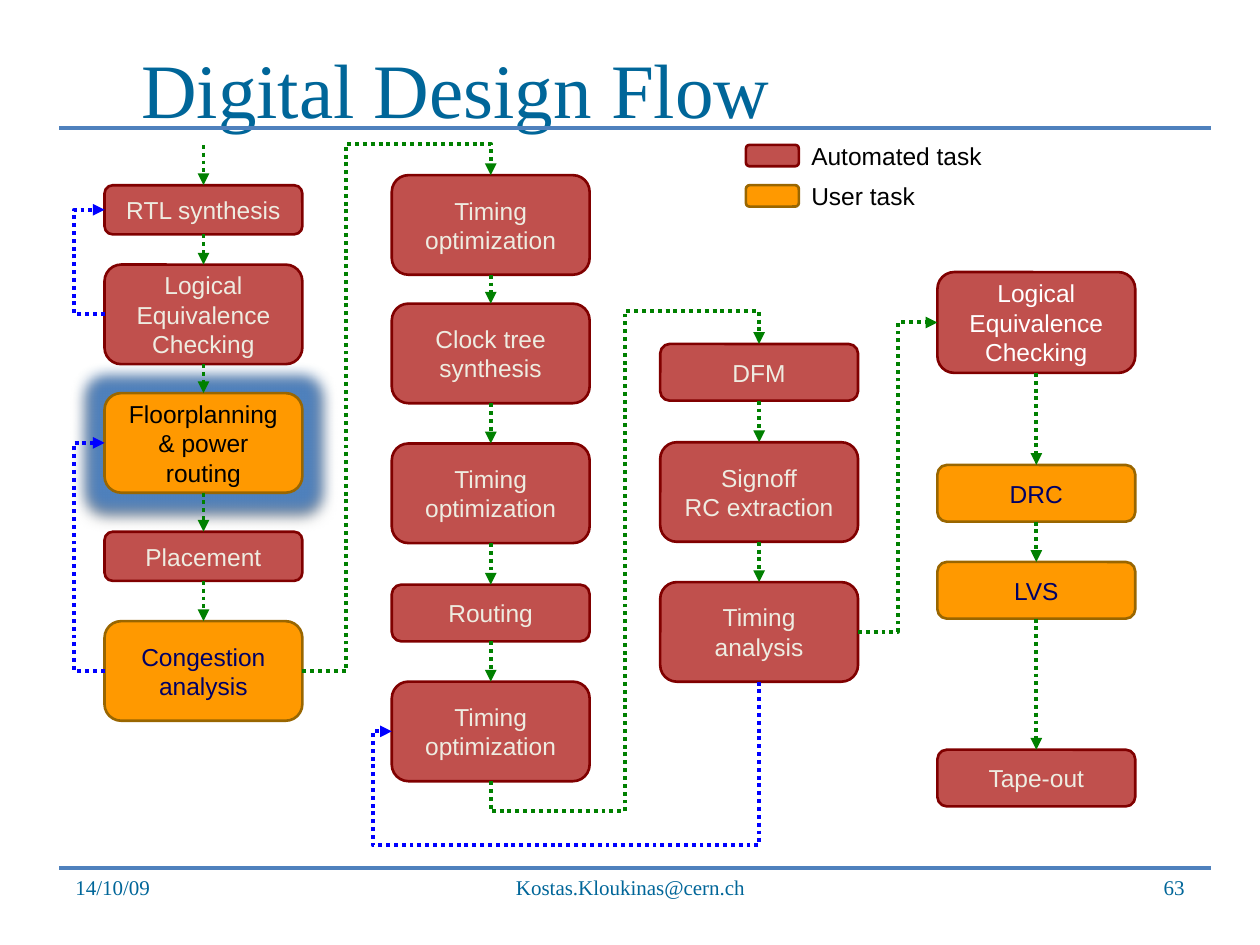
from dataclasses import dataclass

from lxml import etree
from pptx import Presentation
from pptx import util as u
from pptx.dml.color import RGBColor
from pptx.enum import dml, shapes, text
from pptx.oxml.ns import qn


@dataclass(frozen=True)
class Theme:
    serif: str = "Times New Roman"
    sans: str = "Arial"
    title_size: int = 44
    task_size: int = 14
    footer_size: int = 12
    heading: str = "006699"
    rule: str = "4F81BD"
    flow: str = "008000"
    feedback: str = "0000FF"
    ink: str = "000000"
    light: str = "EEECE1"
    white: str = "FFFFFF"
    navy: str = "000066"
    automated: tuple = ("C0504D", "800000")
    user: tuple = ("FF9900", "996600")


@dataclass(frozen=True)
class Box:
    left: float
    top: float
    width: float
    height: float


THEME = Theme()
deck = Presentation()
deck.slide_width, deck.slide_height = u.Inches(10), u.Inches(7.5)
COLUMN, ROW = deck.slide_width / 100, deck.slide_height / 75
SMALL, MEDIUM, LARGE = 3.9, 4.5, 7.9  # task heights in rows
TASK_WIDTH = 15.7


def point(column, row):
    return round(column * COLUMN), round(row * ROW)


def frame(box):
    return *point(box.left, box.top), *point(box.width, box.height)


def write(holder, lines, size, font, color, align, anchor):
    body = holder.text_frame
    body.word_wrap = True
    body.auto_size = text.MSO_AUTO_SIZE.NONE
    body.vertical_anchor = anchor
    for index, line in enumerate(lines):
        para = body.add_paragraph() if index else body.paragraphs[0]
        para.alignment = align
        span = para.add_run()
        span.text = line
        span.font.size, span.font.name = u.Pt(size), font
        span.font.color.rgb = RGBColor.from_string(color)


def style_line(line, color, width):
    line.color.rgb = RGBColor.from_string(color)
    line.width = u.Pt(width)


def style_arrow(arrow, color):
    style_line(arrow.line, color, 2.25)
    arrow.line.dash_style = dml.MSO_LINE.ROUND_DOT
    outline = arrow.element.spPr.find(qn("a:ln"))
    etree.SubElement(outline, qn("a:tailEnd"), type="triangle")


def straight(page, start, end, kind=shapes.MSO_CONNECTOR.STRAIGHT):
    connector = page.shapes.add_connector(kind, *start, *end)
    etree.SubElement(connector.element.spPr, qn("a:effectLst"))
    return connector


def join(page, first, second, sides=(2, 0), kind=shapes.MSO_CONNECTOR.STRAIGHT):
    arrow = straight(page, (0, 0), (0, 0), kind)
    arrow.begin_connect(first, sides[0])
    arrow.end_connect(second, sides[1])
    style_arrow(arrow, THEME.flow)


def side(task, number):
    """Middle of a side: 0 top, 1 left, 2 bottom, 3 right."""
    across, down = ((0.5, 0), (0, 0.5), (0.5, 1), (1, 0.5))[number]
    return round(task.left + task.width * across), round(task.top + task.height * down)


def route(page, start, end, turns, color):
    """Arrow with right-angle turns; each turn is a column ("x") or row ("y")."""
    x, y = start
    corners = []
    for axis, place in turns:
        x, y = (round(place * COLUMN), y) if axis == "x" else (x, round(place * ROW))
        corners.append((x, y))
    corners.append((x, end[1]) if turns[-1][0] == "x" else (end[0], y))
    builder = page.shapes.build_freeform(*start, scale=1.0)
    builder.add_line_segments(corners + [end], close=False)
    arrow = builder.convert_to_shape()
    arrow.shadow.inherit = False
    arrow.fill.background()
    style_arrow(arrow, color)


def rounded(page, box, colors):
    shape = page.shapes.add_shape(shapes.MSO_SHAPE.ROUNDED_RECTANGLE, *frame(box))
    shape.shadow.inherit = False
    shape.fill.solid()
    shape.fill.fore_color.rgb = RGBColor.from_string(colors[0])
    style_line(shape.line, colors[1], 1.5)
    return shape


def add_glow(shape):
    effects = shape.element.spPr.find(qn("a:effectLst"))
    glow = etree.SubElement(effects, qn("a:glow"), rad=str(u.Pt(18)))
    etree.SubElement(glow, qn("a:srgbClr"), val=THEME.rule)
    shadow = etree.SubElement(effects, qn("a:outerShdw"), blurRad=str(u.Pt(4)),
                              dist=str(u.Pt(3)), dir="5400000", rotWithShape="0")
    black = etree.SubElement(shadow, qn("a:srgbClr"), val=THEME.ink)
    etree.SubElement(black, qn("a:alpha"), val="43000")


def task_column(page, left, top, tasks):
    """Stack (label, height, gap before, colours, text colour), joined downwards."""
    placed = []
    for label, height, gap, colors, ink in tasks:
        top += gap
        task = rounded(page, Box(left, top, TASK_WIDTH, height), colors)
        write(task, label.split("\n"), THEME.task_size, THEME.sans, ink,
              text.PP_ALIGN.CENTER, text.MSO_ANCHOR.MIDDLE)
        if placed:
            join(page, placed[-1], task)
        placed.append(task)
        top += height
    return placed


def header(page, box):
    title = page.shapes.title
    title.left, title.top, title.width, title.height = frame(box)
    title.text_frame.margin_top = u.Inches(0.12)
    write(title, ["Digital Design Flow"], THEME.title_size, THEME.serif, THEME.heading,
          text.PP_ALIGN.LEFT, text.MSO_ANCHOR.TOP)


def footer(page, box):
    parts = (("14/10/09", 0, 23.3, text.PP_ALIGN.LEFT),
             ("Kostas.Kloukinas@cern.ch", 29.2, 31.7, text.PP_ALIGN.CENTER),
             ("63", 66.7, 23.3, text.PP_ALIGN.RIGHT))
    for label, offset, width, align in parts:
        holder = page.shapes.add_textbox(
            *frame(Box(box.left + offset, box.top, width, box.height)))
        write(holder, [label], THEME.footer_size, THEME.serif, THEME.heading,
              align, text.MSO_ANCHOR.BOTTOM)


def legend(page, box):
    entries = (("Automated task", THEME.automated), ("User task", THEME.user))
    for index, (label, colors) in enumerate(entries):
        top = box.top + index * (box.height - 1.7)
        rounded(page, Box(box.left, top, 4.2, 1.7), colors)
        caption = page.shapes.add_textbox(
            *frame(Box(box.left + 4.2, top, box.width - 4.2, 1.7)))
        caption.text_frame.margin_top = caption.text_frame.margin_bottom = 0
        write(caption, [label], THEME.task_size, THEME.sans, THEME.ink,
              text.PP_ALIGN.LEFT, text.MSO_ANCHOR.MIDDLE)


def flow_chart(page):
    auto, user = THEME.automated, THEME.user
    light, navy = THEME.light, THEME.navy
    # Four columns of tasks
    synthesis, check, floorplan, _, congestion = task_column(page, 8.3, 14.7, (
        ("RTL synthesis", SMALL, 0, auto, light),
        ("Logical Equivalence Checking", LARGE, 2.4, auto, light),
        ("Floorplanning\n& power routing", LARGE, 2.3, user, THEME.ink),
        ("Placement", SMALL, 3.1, auto, light),
        ("Congestion analysis", LARGE, 3.2, user, navy)))
    add_glow(floorplan)
    timing = task_column(page, 31.1, 13.9, (
        ("Timing optimization", LARGE, 0, auto, light),
        ("Clock tree synthesis", LARGE, 2.3, auto, light),
        ("Timing optimization", LARGE, 3.2, auto, light),
        ("Routing", MEDIUM, 3.3, auto, light),
        ("Timing optimization", LARGE, 3.2, auto, light)))
    signoff = task_column(page, 52.4, 27.3, (
        ("DFM", MEDIUM, 0, auto, light),
        ("Signoff\nRC extraction", LARGE, 3.3, auto, light),
        ("Timing analysis", LARGE, 3.2, auto, light)))
    final = task_column(page, 74.4, 21.6, (
        ("Logical Equivalence Checking", 8, 0, auto, THEME.white),
        ("DRC", MEDIUM, 7.3, user, navy),
        ("LVS", MEDIUM, 3.2, user, navy),
        ("Tape-out", MEDIUM, 10.4, auto, light)))

    # Flow into the first column and from column to column
    x, _ = side(synthesis, 0)
    entry = straight(page, (x, round(11.5 * ROW)), side(synthesis, 0))
    entry.end_connect(synthesis, 0)
    style_arrow(entry, THEME.flow)
    route(page, side(congestion, 3), side(timing[0], 0),
          (("x", 27.5), ("y", 11.4)), THEME.flow)
    route(page, side(timing[-1], 2), side(signoff[0], 0),
          (("y", 64.4), ("x", 49.6), ("y", 24.7)), THEME.flow)
    join(page, signoff[-1], final[0], (3, 1), shapes.MSO_CONNECTOR.ELBOW)

    # Feedback loops
    for first, second in ((check, synthesis), (congestion, floorplan)):
        route(page, side(first, 1), side(second, 1), (("x", 5.9),), THEME.feedback)
    route(page, side(signoff[-1], 2), side(timing[-1], 1),
          (("y", 67.1), ("x", 29.6)), THEME.feedback)


def main():
    page = deck.slides.add_slide(deck.slide_layouts[5])
    # Rules above and below the chart
    for row in (10.15, 68.9):
        style_line(straight(page, point(4.7, row), point(96.1, row)).line, THEME.rule, 2)
    header(page, Box(10.2, 2.1, 84.4, 7.9))
    flow_chart(page)
    legend(page, Box(59.2, 11.5, 20.7, 4.9))
    footer(page, Box(5, 69.2, 90, 2.7))
    deck.save("out.pptx")


if __name__ == "__main__":
    main()
